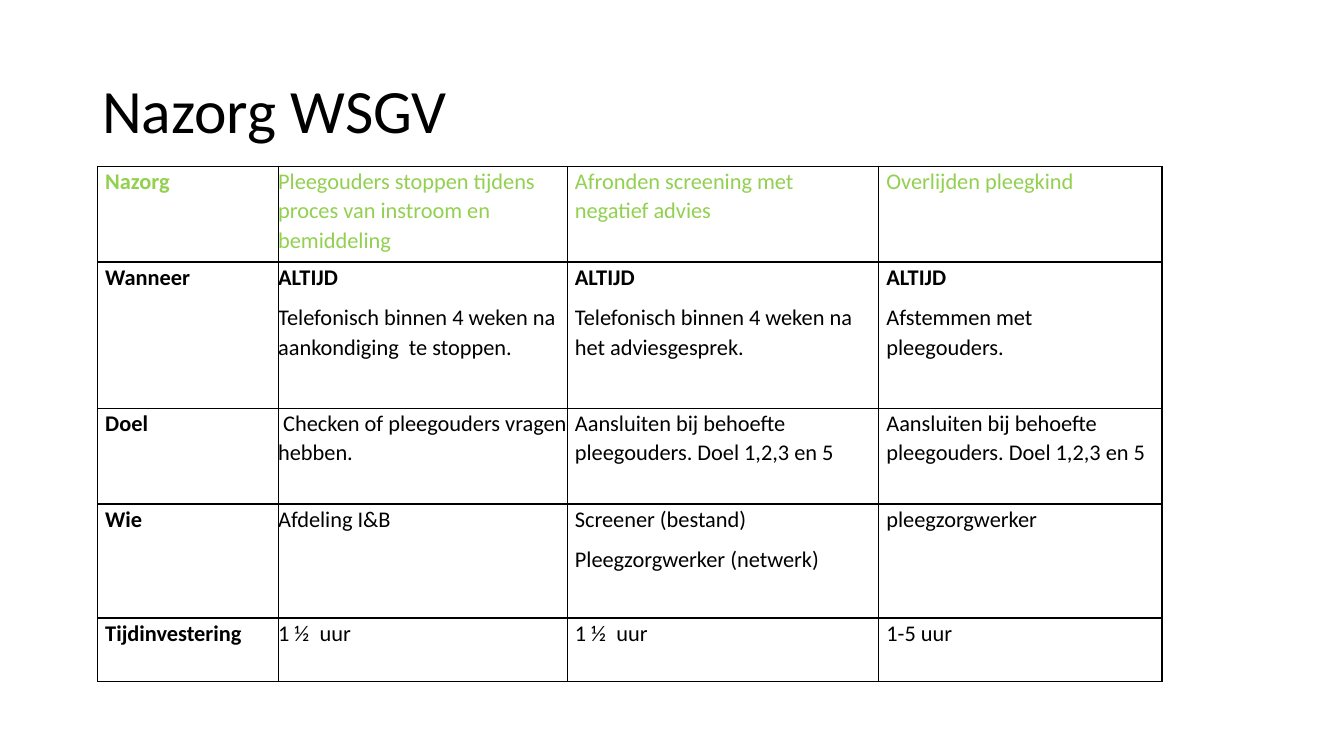
import pptx
import pptx.dml.color
import pptx.enum.text
import pptx.oxml
import pptx.oxml.ns
import pptx.util

Pt = pptx.util.Pt
FONT = "Calibri"
BLACK = "000000"
GREEN = "92D050"
COLUMN_WIDTHS = [128.9, 206.6, 222.5, 202.3]
ROW_HEIGHTS = [68.4, 104.4, 68.4, 81.4, 45.4]
AFTERCARE = [
    ["Nazorg", "Pleegouders stoppen tijdens proces van instroom en bemiddeling",
     "Afronden screening met negatief advies", "Overlijden pleegkind"],
    ["Wanneer", "ALTIJD\nTelefonisch binnen 4 weken na aankondiging  te stoppen.",
     "ALTIJD\nTelefonisch binnen 4 weken na het adviesgesprek.",
     "ALTIJD\nAfstemmen met pleegouders."],
    ["Doel", " Checken of pleegouders vragen hebben.",
     "Aansluiten bij behoefte pleegouders. Doel 1,2,3 en 5",
     "Aansluiten bij behoefte pleegouders. Doel 1,2,3 en 5"],
    ["Wie", "Afdeling I&B", "Screener (bestand)\nPleegzorgwerker (netwerk)",
     "pleegzorgwerker"],
    ["Tijdinvestering", "1 ½  uur", "1 ½  uur", "1-5 uur"],
]


def rgb(value):
    """Return the colour for a hex string."""
    return pptx.dml.color.RGBColor.from_string(value)


def style_paragraph(p, size, color, bold, spacing, after=0):
    """Set the font and spacing of a paragraph."""
    p.font.name = FONT
    p.font.size = Pt(size)
    p.font.bold = bold
    p.font.color.rgb = rgb(color)
    p.line_spacing = spacing
    p.space_before = Pt(0)
    p.space_after = Pt(after)


def add_title(s, text):
    """Add the slide title."""
    tf = s.shapes.add_textbox(Pt(66), Pt(28.8), Pt(828), Pt(104.4)).text_frame
    tf.word_wrap = True
    tf.vertical_anchor = pptx.enum.text.MSO_ANCHOR.MIDDLE
    tf.text = text
    style_paragraph(tf.paragraphs[0], 44, BLACK, False, 0.9)


def add_borders(cell, color, width):
    """Draw a line on all four sides of a cell."""
    tc_pr = cell._tc.get_or_add_tcPr()
    for side in ("lnL", "lnR", "lnT", "lnB"):
        tc_pr.append(pptx.oxml.parse_xml(
            f'<a:{side} {pptx.oxml.ns.nsdecls("a")} w="{Pt(width)}"><a:solidFill>'
            f'<a:srgbClr val="{color}"/></a:solidFill></a:{side}>'))


def fill_cell(cell, text, color, inset, bold):
    """Write the text of a cell and set its look."""
    add_borders(cell, BLACK, 1)
    cell.fill.background()
    cell.margin_left = cell.margin_right = Pt(inset)
    cell.margin_top = cell.margin_bottom = Pt(0)
    cell.text = text
    for p in cell.text_frame.paragraphs:
        style_paragraph(p, 16, color, bold or p.text == "ALTIJD", 1.07, 8)


def add_aftercare_table(s):
    """Add the table of aftercare situations."""
    table = s.shapes.add_table(
        len(ROW_HEIGHTS), len(COLUMN_WIDTHS), Pt(69.8), Pt(118.8),
        Pt(sum(COLUMN_WIDTHS)), Pt(sum(ROW_HEIGHTS))).table
    table.first_row = table.horz_banding = False
    for column, width in zip(table.columns, COLUMN_WIDTHS):
        column.width = Pt(width)
    for row, height in zip(table.rows, ROW_HEIGHTS):
        row.height = Pt(height)
    for i, texts in enumerate(AFTERCARE):
        for j, text in enumerate(texts):
            fill_cell(table.cell(i, j), text, GREEN if i == 0 else BLACK,
                      0 if j == 1 else 5.4, j == 0)


def main():
    """Build the slide and save it."""
    prs = pptx.Presentation()
    prs.slide_width, prs.slide_height = Pt(960), Pt(540)
    s = prs.slides.add_slide(prs.slide_layouts[6])
    add_title(s, "Nazorg WSGV")
    add_aftercare_table(s)
    prs.save("out.pptx")


if __name__ == "__main__":
    main()
